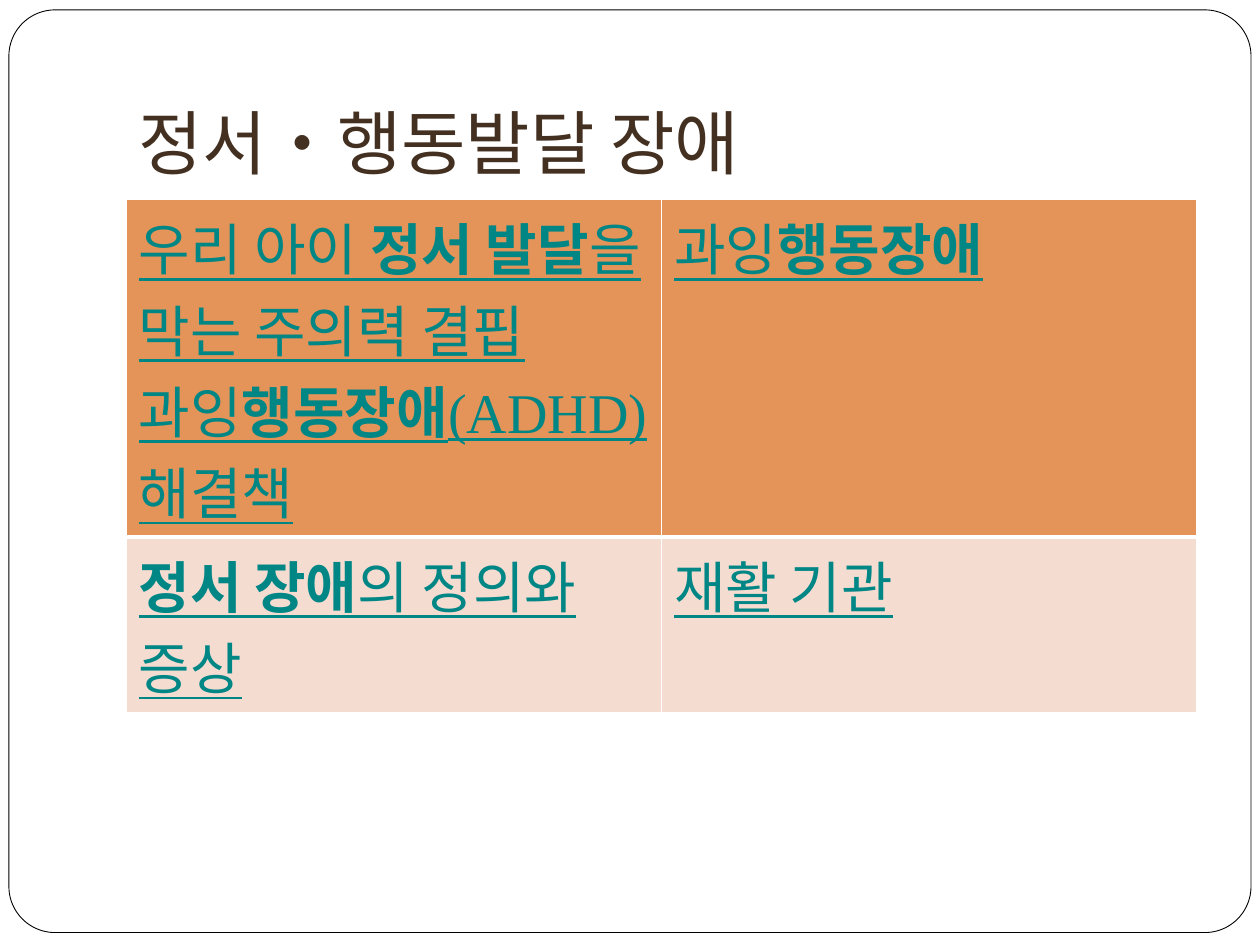
from dataclasses import dataclass

from lxml.etree import SubElement
from pptx import Presentation
from pptx.dml.color import RGBColor
from pptx.enum.shapes import MSO_SHAPE
from pptx.enum.text import MSO_ANCHOR, MSO_AUTO_SIZE, PP_ALIGN
from pptx.oxml.ns import qn
from pptx.util import Cm, Pt


@dataclass(frozen=True)
class Theme:
    paper: str = "FFFFFF"
    outline: str = "000000"
    title: str = "433021"
    link: str = "008685"
    header_row: str = "E49458"
    body_row: str = "F5DCD1"
    title_font: str = "Cabin"
    table_font: str = "Times New Roman"
    title_size: int = 40
    table_size: int = 32


class PageBuilder:
    """Holds the theme and the current slide."""

    def __init__(self, page, theme):
        self.page = page
        self.theme = theme

    def frame(self, left, top, width, height):
        box = self.page.shapes.add_shape(
            MSO_SHAPE.ROUNDED_RECTANGLE, Cm(left), Cm(top), Cm(width), Cm(height))
        box.adjustments[0] = 0.05
        box.shadow.inherit = False
        box.fill.solid()
        box.fill.fore_color.rgb = RGBColor.from_string(self.theme.paper)
        box.line.color.rgb = RGBColor.from_string(self.theme.outline)
        box.line.width = Pt(0.5)
        # Send behind the title placeholder
        self.page.shapes._spTree.insert(2, box._element)

    def style_span(self, span, font, size, color, bold=False, underline=False):
        span.font.name = font
        span.font.size = Pt(size)
        span.font.color.rgb = RGBColor.from_string(color)
        span.font.bold = bold
        span.font.underline = underline

    def title(self, text, left, top, width, height):
        box = self.page.shapes.title
        box.left, box.top, box.width, box.height = map(Cm, (left, top, width, height))
        text_frame = box.text_frame
        text_frame.text = text
        text_frame.auto_size = MSO_AUTO_SIZE.NONE
        text_frame.vertical_anchor = MSO_ANCHOR.BOTTOM
        text_frame.margin_bottom = Cm(0.25)
        para = text_frame.paragraphs[0]
        para.alignment = PP_ALIGN.LEFT
        self.style_span(para.runs[0], self.theme.title_font,
                        self.theme.title_size, self.theme.title)

    def borders(self, cell, widths):
        properties = cell._tc.get_or_add_tcPr()
        for position, (side, width) in enumerate(widths.items()):
            line = properties.makeelement(qn(f"a:{side}"), {"w": str(Pt(width))})
            fill = SubElement(line, qn("a:solidFill"))
            SubElement(fill, qn("a:srgbClr"), val=self.theme.paper)
            properties.insert(position, line)

    def table(self, rows, fills, heights, left, top, width):
        columns = len(rows[0])
        table = self.page.shapes.add_table(
            len(rows), columns, Cm(left), Cm(top), Cm(width), Cm(sum(heights))).table
        table.first_row = table.horz_banding = False
        for column in table.columns:
            column.width = Cm(width / columns)
        for r, (row, fill, height) in enumerate(zip(rows, fills, heights)):
            table.rows[r].height = Cm(height)
            # A thick rule separates the header row from the body
            widths = {"lnL": 1, "lnR": 1,
                      "lnT": 3 if r == 1 else 1, "lnB": 3 if r == 0 else 1}
            for c, spans in enumerate(row):
                cell = table.cell(r, c)
                cell.fill.solid()
                cell.fill.fore_color.rgb = RGBColor.from_string(fill)
                self.borders(cell, widths)
                para = cell.text_frame.paragraphs[0]
                for text, bold in spans:
                    span = para.add_run()
                    span.text = text
                    self.style_span(span, self.theme.table_font, self.theme.table_size,
                                    self.theme.link, bold, underline=True)


# Each cell is a list of (text, bold) spans
TOPICS = [
    [[("우리 아이 ", False), ("정서 발달", True), ("을 막는 주의력 결핍 과잉", False),
      ("행동장애", True), ("(ADHD) 해결책", False)],
     [("과잉", False), ("행동장애", True)]],
    [[("정서 장애", True), ("의 정의와 증상", False)],
     [("재활 기관", False)]],
]


def main():
    deck = Presentation()
    deck.slide_width, deck.slide_height = Cm(25.4), Cm(19.05)
    theme = Theme()
    builder = PageBuilder(deck.slides.add_slide(deck.slide_layouts[5]), theme)

    # Page frame and heading
    builder.frame(0.18, 0.2, 25.04, 18.6)
    builder.title("정서‧행동발달 장애", 2.54, 0.76, 21.59, 3.18)

    # Topic table
    builder.table(TOPICS, [theme.header_row, theme.body_row], [6.8, 3.5],
                  2.54, 4.02, 21.59)
    deck.save("out.pptx")


if __name__ == "__main__":
    main()
